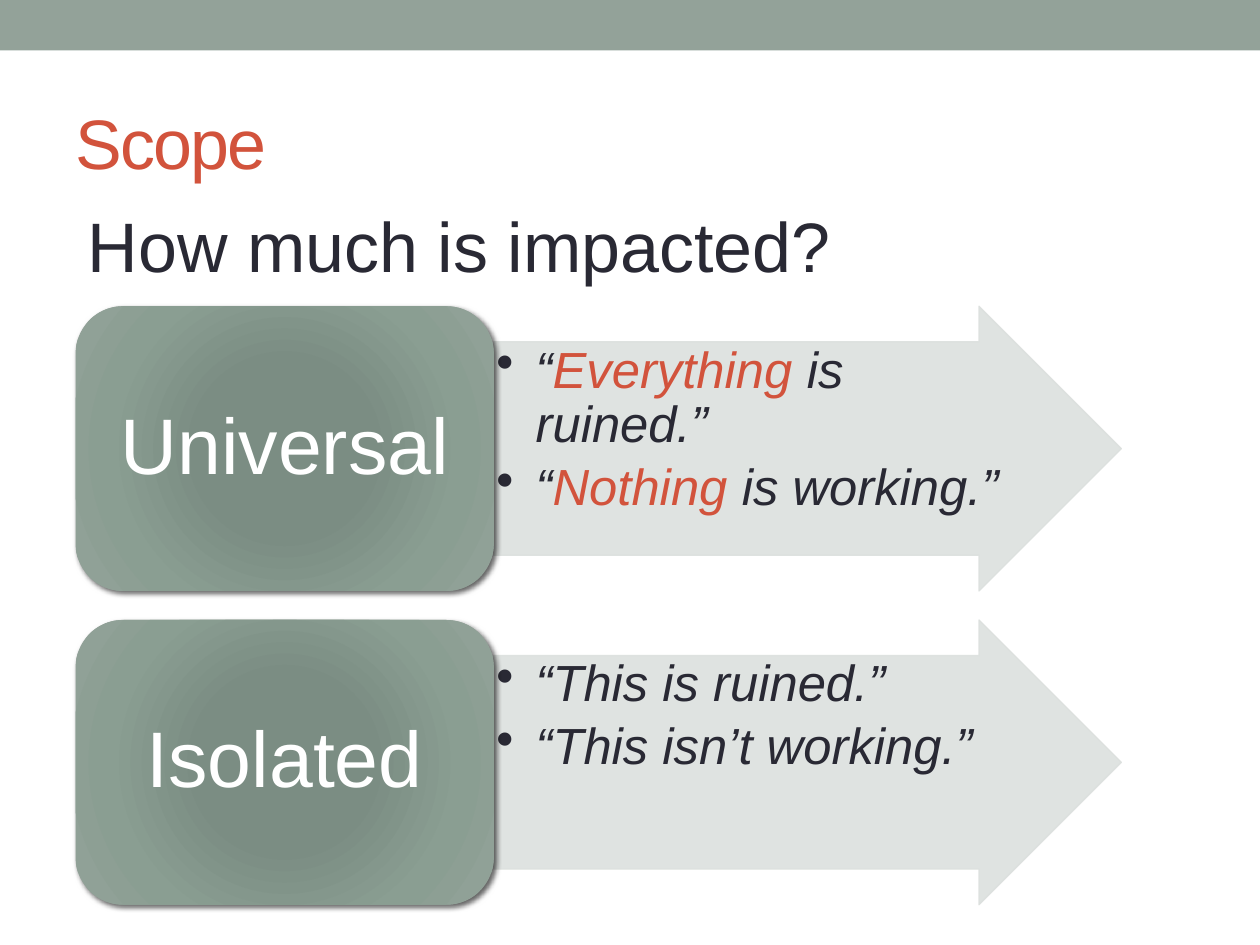
"""Build the Scope slide, with one labelled arrow for each kind of impact."""
from dataclasses import dataclass

import lxml.etree
import pptx
import pptx.dml.color
import pptx.enum.shapes
import pptx.enum.text
import pptx.oxml
import pptx.oxml.ns
import pptx.util

Pt = pptx.util.Pt
Kind = pptx.enum.shapes.MSO_SHAPE
Align = pptx.enum.text.PP_ALIGN
Anchor = pptx.enum.text.MSO_ANCHOR
qn = pptx.oxml.ns.qn

SAGE, RED, INK, PALE, WHITE = "93A299", "D2533C", "292934", "DCE0DE", "FFFFFF"
STOPS = ((0, "7B8E82"), (34, "7B8D83"), (70, "8A9E92"), (100, SAGE))
LEFT, TOP, HIGH, STEP = 43.2, 175, 162.7, 179.3
BOX, ARROW = 239, 358.6


@dataclass
class Run:
    text: str
    color: str = INK


@dataclass
class Band:
    label: str
    points: list[list[Run]]


BANDS = [
    Band("Universal", [
        [Run("“"), Run("Everything ", RED), Run("is ruined.”")],
        [Run("“"), Run("Nothing ", RED), Run("is working.”")],
    ]),
    Band("Isolated", [
        [Run("“This is ruined.”")],
        [Run("“This isn’t working.”")],
    ]),
]


def paint(target, color: str) -> None:
    target.rgb = pptx.dml.color.RGBColor.from_string(color)


def solid(fill, color: str) -> None:
    fill.solid()
    paint(fill.fore_color, color)


def add_shape(slide, kind, left: float, top: float, width: float, high: float):
    shape = slide.shapes.add_shape(kind, Pt(left), Pt(top), Pt(width), Pt(high))
    shape.shadow.inherit = False
    shape.line.fill.background()
    return shape


def set_frame(frame, anchor, side: float, edge: float) -> None:
    frame.word_wrap = True
    frame.vertical_anchor = anchor
    frame.margin_left = frame.margin_right = Pt(side)
    frame.margin_top = frame.margin_bottom = Pt(edge)


def add_run(para, run: Run, size: float, slant: bool = False):
    part = para.add_run()
    part.text = run.text
    part.font.name = "Arial"
    part.font.size = Pt(size)
    part.font.italic = slant
    paint(part.font.color, run.color)
    return part


def add_line(slide, run: Run, left: float, top: float, width: float,
             high: float, anchor):
    box = slide.shapes.add_textbox(Pt(left), Pt(top), Pt(width), Pt(high))
    set_frame(box.text_frame, anchor, 7.2, 3.6)
    return add_run(box.text_frame.paragraphs[0], run, 40)


def shade(shape) -> None:
    stops = "".join(
        f'<a:gs pos="{pos * 1000}"><a:srgbClr val="{color}"/></a:gs>'
        for pos, color in STOPS)
    space = pptx.oxml.ns.nsdecls("a")
    grad = pptx.oxml.parse_xml(
        f'<a:gradFill {space} rotWithShape="1"><a:gsLst>{stops}</a:gsLst>'
        '<a:path path="circle"><a:fillToRect l="50000" t="50000" r="50000" '
        'b="50000"/></a:path></a:gradFill>')
    cast = pptx.oxml.parse_xml(
        f'<a:outerShdw {space} blurRad="{Pt(3)}" dist="{Pt(2)}" dir="2700000" '
        'rotWithShape="0"><a:srgbClr val="000000"><a:alpha val="60000"/>'
        '</a:srgbClr></a:outerShdw>')
    props = shape._element.spPr
    props.find(qn("a:prstGeom")).addnext(grad)
    props.find(qn("a:effectLst")).append(cast)


def add_bullet(para) -> None:
    props = para._p.get_or_add_pPr()
    props.set("marL", str(Pt(22.5)))
    props.set("indent", str(Pt(-22.5)))
    lxml.etree.SubElement(props, qn("a:buChar")).set("char", "•")


def add_arrow(slide, band: Band, top: float) -> None:
    shape = add_shape(slide, Kind.RIGHT_ARROW, LEFT + BOX, top, ARROW, HIGH)
    shape.adjustments[0] = 0.75
    shape.adjustments[1] = 0.5
    solid(shape.fill, PALE)
    solid(shape.line.fill, PALE)
    shape.line.width = Pt(0.75)
    for color in shape._element.spPr.iter(qn("a:srgbClr")):
        lxml.etree.SubElement(color, qn("a:alpha")).set("val", "90000")
    frame = shape.text_frame
    set_frame(frame, Anchor.TOP, 1.4, 1.4)
    for i, runs in enumerate(band.points):
        para = frame.add_paragraph() if i else frame.paragraphs[0]
        add_bullet(para)
        para.alignment = Align.LEFT
        para.line_spacing = 0.9
        para.space_after = Pt(4.5)
        paint(para.font.color, INK)
        for run in runs:
            add_run(para, run, 29, True)


def add_box(slide, band: Band, top: float) -> None:
    shape = add_shape(slide, Kind.ROUNDED_RECTANGLE, LEFT, top, BOX, HIGH)
    shade(shape)
    set_frame(shape.text_frame, Anchor.MIDDLE, 13.5, 6.75)
    para = shape.text_frame.paragraphs[0]
    para.alignment = Align.CENTER
    para.line_spacing = 0.9
    add_run(para, Run(band.label, WHITE), 45)


def main() -> None:
    deck = pptx.Presentation()
    deck.slide_width, deck.slide_height = Pt(720), Pt(540)
    slide = deck.slides.add_slide(deck.slide_layouts[6])
    strip = add_shape(slide, Kind.RECTANGLE, 0, 0, 720, 28.8)
    solid(strip.fill, SAGE)
    title = add_line(slide, Run("Scope", RED), 36, 42, 648, 78, Anchor.MIDDLE)
    title.font._element.set("spc", "-100")
    for i, band in enumerate(BANDS):
        add_arrow(slide, band, TOP + i * STEP)
        add_box(slide, band, TOP + i * STEP)
    add_line(slide, Run("How much is impacted?"), LEFT, 112.3, 657.4, 55,
             Anchor.TOP)
    deck.save("out.pptx")


if __name__ == "__main__":
    main()
